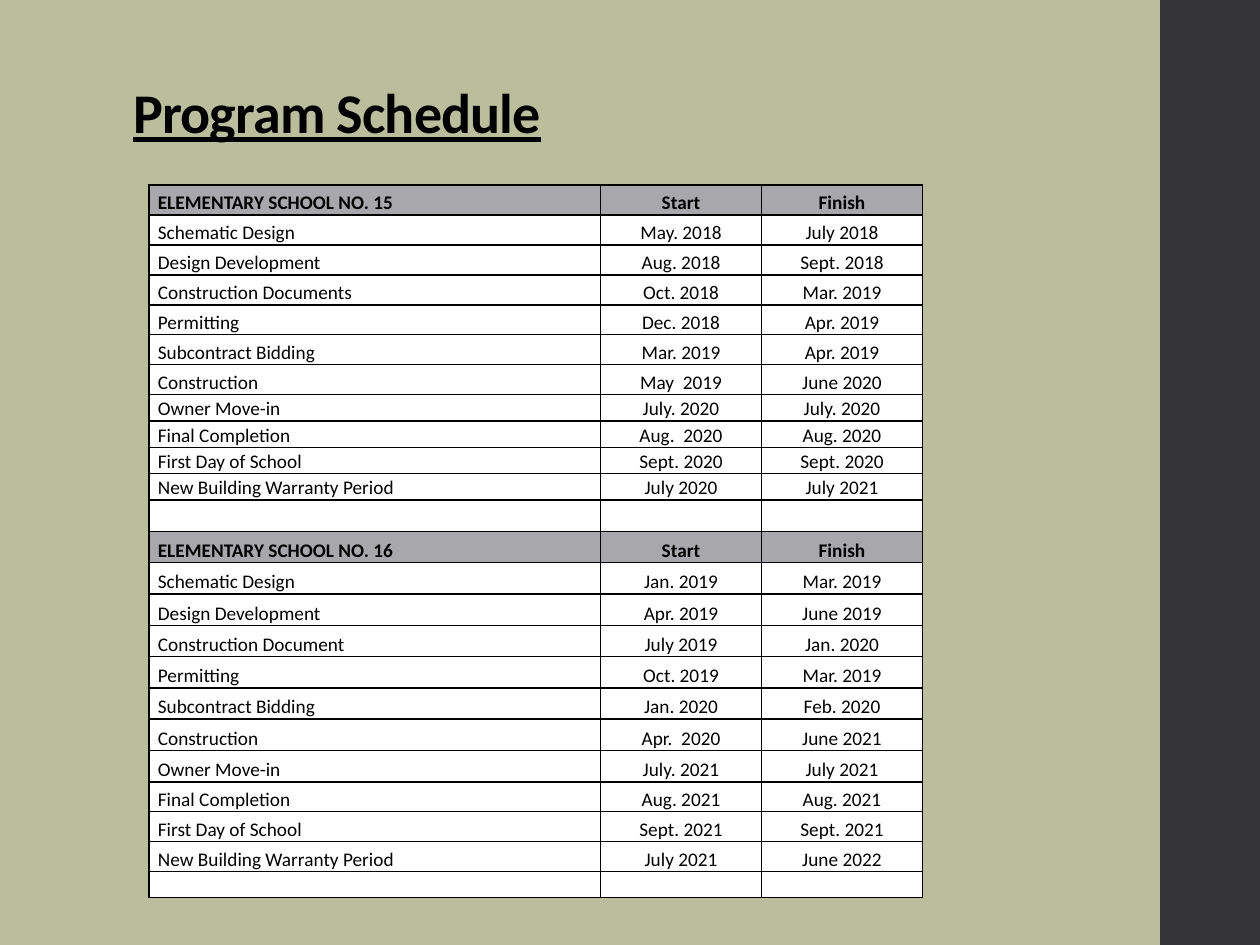
from lxml import etree
from pptx import Presentation
from pptx.dml.color import RGBColor
from pptx.enum.shapes import MSO_SHAPE
from pptx.enum.text import MSO_ANCHOR, PP_ALIGN
from pptx.oxml.ns import qn
from pptx.util import Pt


def paint(fill, color):
    fill.solid()
    fill.fore_color.rgb = RGBColor.from_string(color)


def write(frame, text, size, bold=False, underline=False, align=PP_ALIGN.LEFT,
          space=0, line=1.0, tracking=0):
    paragraph = frame.paragraphs[0]
    paragraph.alignment = align
    paragraph.space_before = paragraph.space_after = Pt(space)
    paragraph.line_spacing = line
    if not text:  # keeps an empty row as low as a filled one
        etree.SubElement(paragraph._p, qn("a:endParaRPr"), sz=str(size * 100))
        return
    run = paragraph.add_run()
    run.text = text
    run.font.name = "Calibri"
    run.font.size = Pt(size)
    run.font.bold = bold
    run.font.underline = underline
    paint(run.font.fill, "000000")
    if tracking:
        run.font._element.set("spc", str(int(tracking * 100)))


schedule = [
    ("ELEMENTARY SCHOOL NO. 15", "Start", "Finish"),
    ("Schematic Design", "May. 2018", "July 2018"),
    ("Design Development", "Aug. 2018", "Sept. 2018"),
    ("Construction Documents", "Oct. 2018", "Mar. 2019"),
    ("Permitting", "Dec. 2018", "Apr. 2019"),
    ("Subcontract Bidding", "Mar. 2019", "Apr. 2019"),
    ("Construction", "May  2019", "June 2020"),
    ("Owner Move-in", "July. 2020", "July. 2020"),
    ("Final Completion", "Aug.  2020", "Aug. 2020"),
    ("First Day of School", "Sept. 2020", "Sept. 2020"),
    ("New Building Warranty Period", "July 2020", "July 2021"),
    ("", "", ""),
    ("ELEMENTARY SCHOOL NO. 16", "Start", "Finish"),
    ("Schematic Design", "Jan. 2019", "Mar. 2019"),
    ("Design Development", "Apr. 2019", "June 2019"),
    ("Construction Document", "July 2019", "Jan. 2020"),
    ("Permitting", "Oct. 2019", "Mar. 2019"),
    ("Subcontract Bidding", "Jan. 2020", "Feb. 2020"),
    ("Construction", "Apr.  2020", "June 2021"),
    ("Owner Move-in", "July. 2021", "July 2021"),
    ("Final Completion", "Aug. 2021", "Aug. 2021"),
    ("First Day of School", "Sept. 2021", "Sept. 2021"),
    ("New Building Warranty Period", "July 2021", "June 2022"),
    ("", "", ""),
]
row_heights = [17.1] * 7 + [15.1] * 4 + [17.9] * 9 + [17.1] * 3 + [14.9]
column_widths = [258, 92, 92]

deck = Presentation()
deck.slide_width, deck.slide_height = Pt(720), Pt(540)
slide = deck.slides.add_slide(deck.slide_layouts[5])
paint(slide.background.fill, "BBBE9C")

side_band = slide.shapes.add_shape(MSO_SHAPE.RECTANGLE, Pt(663), Pt(0), Pt(57.6), Pt(540))
side_band.shadow.inherit = False
paint(side_band.fill, "353537")
side_band.line.fill.background()

title = slide.shapes.title
title.left, title.top, title.width, title.height = Pt(69), Pt(29), Pt(523), Pt(58)
title.text_frame.vertical_anchor = MSO_ANCHOR.BOTTOM
write(title.text_frame, "Program Schedule", 32, bold=True, underline=True,
      line=0.9, tracking=-0.5)

table = slide.shapes.add_table(
    len(schedule), len(column_widths), Pt(85.2), Pt(105.8),
    Pt(sum(column_widths)), Pt(sum(row_heights))).table
for column, width in zip(table.columns, column_widths):
    column.width = Pt(width)

for row, height, entries in zip(table.rows, row_heights, schedule):
    row.height = Pt(height)
    is_header = entries[1] == "Start"
    for column_index, (cell, entry) in enumerate(zip(row.cells, entries)):
        cell.vertical_anchor = MSO_ANCHOR.BOTTOM
        cell.margin_left = cell.margin_right = Pt(5)
        cell.margin_top = cell.margin_bottom = Pt(0)
        write(cell.text_frame, entry, 11, bold=is_header, space=2,
              align=PP_ALIGN.CENTER if column_index else PP_ALIGN.LEFT)
        cell_format = cell._tc.get_or_add_tcPr()
        for side in ("a:lnL", "a:lnR", "a:lnT", "a:lnB"):
            border = etree.SubElement(cell_format, qn(side), w=str(Pt(1)))
            border_fill = etree.SubElement(border, qn("a:solidFill"))
            etree.SubElement(border_fill, qn("a:srgbClr"), val="000000")
        paint(cell.fill, "A8A8AC" if is_header else "FFFFFF")

deck.save("out.pptx")
